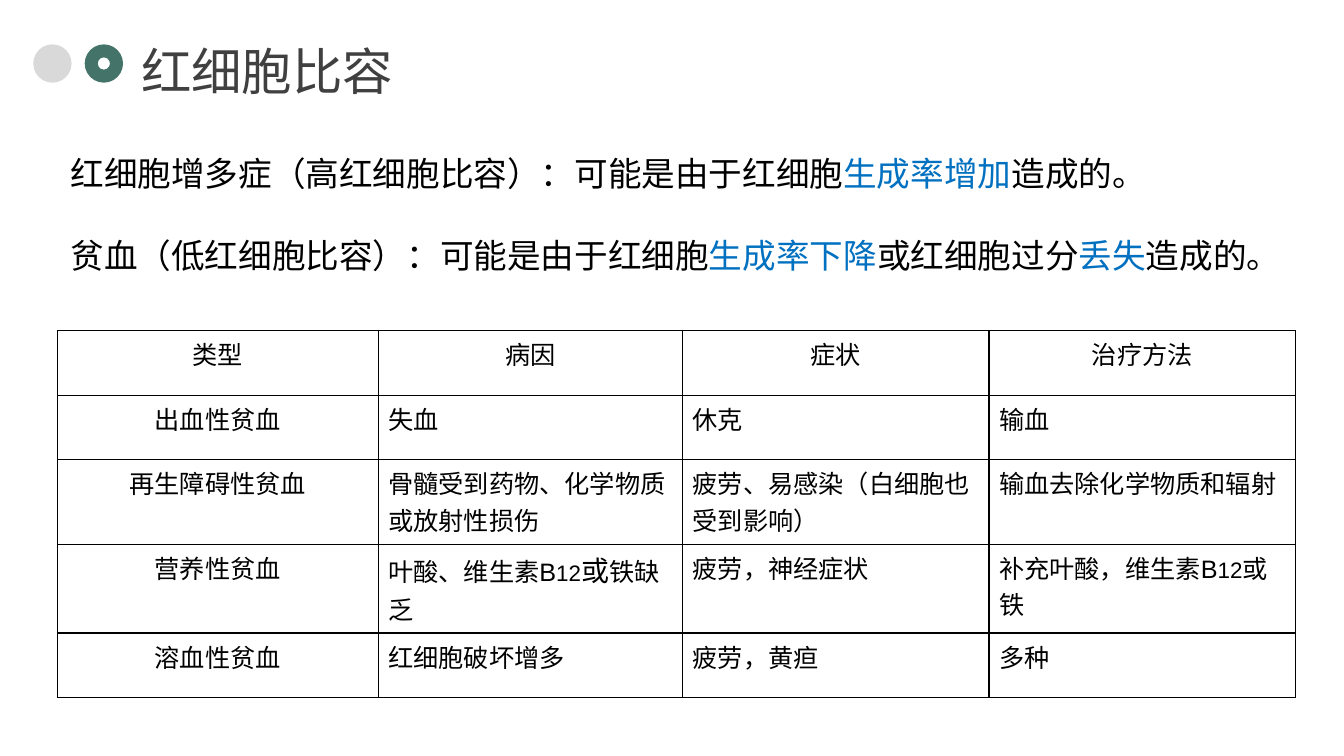
from lxml import etree
from pptx import Presentation
from pptx import oxml
from pptx import util as u
from pptx.dml.color import RGBColor
from pptx.enum import shapes, text
from pptx.oxml import ns

PX = 9144  # EMU per px, 100 px to the inch
LEFT, CENTER, JUSTIFY = text.PP_ALIGN.LEFT, text.PP_ALIGN.CENTER, text.PP_ALIGN.JUSTIFY
BLACK, BLUE = "000000", "0070C0"


def px(*lengths):
    return [u.Emu(length * PX) for length in lengths]


def write(frame, runs, size=18, color=BLACK, align=LEFT):
    """Fill the first paragraph; a run is a string or (string, overrides)."""
    paragraph = frame.paragraphs[0]
    paragraph.alignment = align
    for part in [runs] if isinstance(runs, str) else runs:
        words, changes = (part, {}) if isinstance(part, str) else part
        run = paragraph.add_run()
        run.text = words
        run.font.name = "Arial"
        run.font.size = u.Pt(changes.get("size", size))
        run.font.color.rgb = RGBColor.from_string(changes.get("color", color))


prs = Presentation()
prs.slide_width, prs.slide_height = px(1333, 750)
slide = prs.slides.add_slide(prs.slide_layouts[5])

# Heading with its two round marks
marks = [
    (shapes.MSO_SHAPE.OVAL, 33, "D9D9D9"),
    (shapes.MSO_SHAPE.DONUT, 84, "447469"),
]
for kind, left, color in marks:
    mark = slide.shapes.add_shape(kind, *px(left, 44, 38, 38))
    mark.fill.solid()
    mark.fill.fore_color.rgb = RGBColor.from_string(color)
    mark.line.fill.background()
    mark.shadow.inherit = False
    if kind == shapes.MSO_SHAPE.DONUT:
        mark.adjustments[0] = 0.34

heading = slide.shapes.title
heading.left, heading.top, heading.width, heading.height = px(130, 34, 332, 71)
heading.text_frame.auto_size = text.MSO_AUTO_SIZE.SHAPE_TO_FIT_TEXT
write(heading.text_frame, "红细胞比容", size=36, color="404040", align=JUSTIFY)

# Two statements
blue = {"color": BLUE}
statements = [
    (147, 1158, ["红细胞增多症（高红细胞比容）：可能是由于红细胞",
                 ("生成率增加", blue), "造成的。"]),
    (228, 1205, ["贫血（低红细胞比容）：可能是由于红细胞", ("生成率下降", blue),
                 "或红细胞过分", ("丢失", blue), "造成的。"]),
]
for top, width, runs in statements:
    statement = slide.shapes.add_textbox(*px(60, top, width, 50)).text_frame
    statement.word_wrap = True
    statement.auto_size = text.MSO_AUTO_SIZE.SHAPE_TO_FIT_TEXT
    write(statement, runs, size=24)

# Table of anaemia types
twelve = ("12", {"size": 16})
anaemias = [
    ["类型", "病因", "症状", "治疗方法"],
    ["出血性贫血", "失血", "休克", "输血"],
    ["再生障碍性贫血", "骨髓受到药物、化学物质或放射性损伤",
     "疲劳、易感染（白细胞也受到影响）", "输血去除化学物质和辐射"],
    ["营养性贫血", ["叶酸、维生素B", twelve, ("或", {"size": 20}), "铁缺乏"],
     "疲劳，神经症状", ["补充叶酸，维生素B", twelve, "或铁"]],
    ["溶血性贫血", "红细胞破坏增多", "疲劳，黄疸", "多种"],
]
table = slide.shapes.add_table(5, 4, *px(57, 328, 1228, 364)).table
table.first_row = table.horz_banding = False
for column, width in zip(table.columns, px(318, 302, 304, 304)):
    column.width = width
for row, height in zip(table.rows, px(64, 64, 84, 88, 64)):
    row.height = height

for r, entries in enumerate(anaemias):
    for c, entry in enumerate(entries):
        cell = table.cell(r, c)
        write(cell.text_frame, entry, align=CENTER if r == 0 or c == 0 else LEFT)
        properties = cell._tc.get_or_add_tcPr()
        for side in ("a:lnL", "a:lnR", "a:lnT", "a:lnB"):
            border = etree.SubElement(properties, ns.qn(side), w=str(u.Pt(1)))
            solid = etree.SubElement(border, ns.qn("a:solidFill"))
            etree.SubElement(solid, ns.qn("a:srgbClr"), val=BLACK)
        cell.fill.background()

prs.save("out.pptx")
